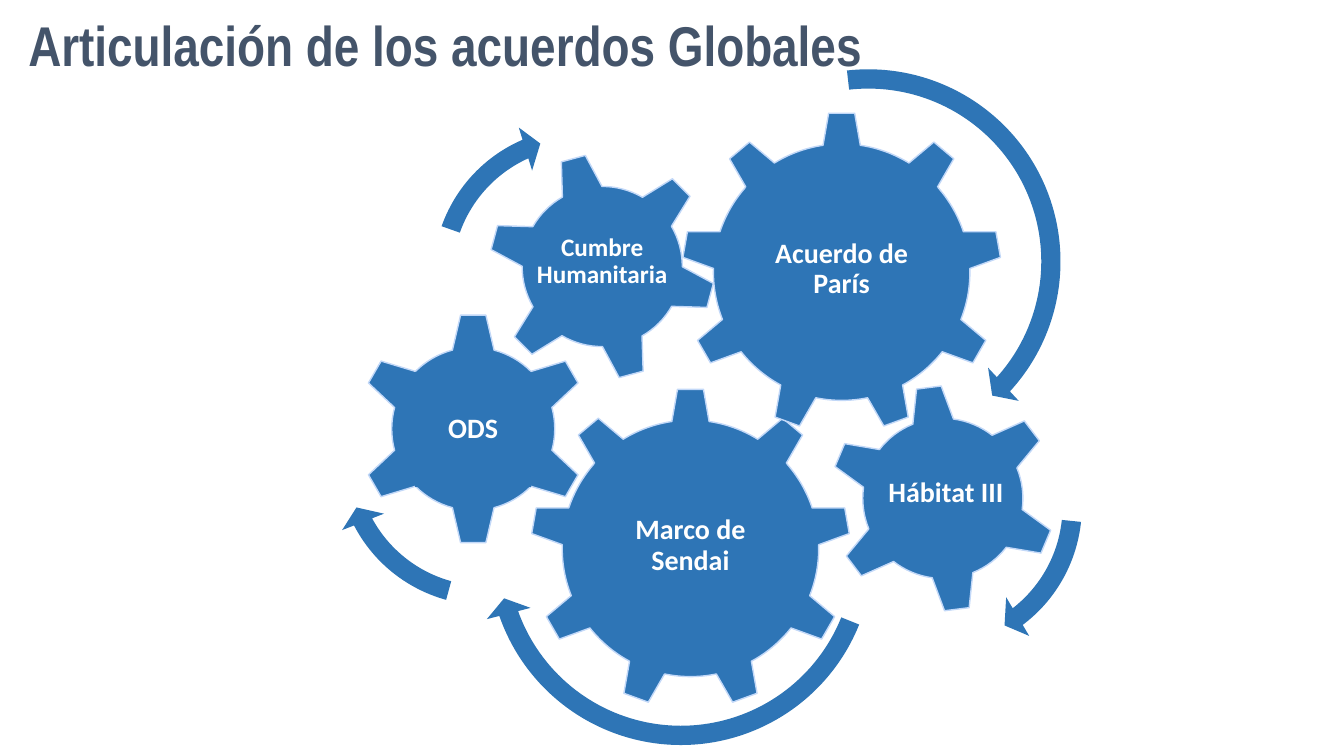
"""Build a slide of interlocking gears for the global agreements."""
from dataclasses import dataclass

from pptx import Presentation
from pptx.dml.color import RGBColor
from pptx.enum.shapes import MSO_SHAPE
from pptx.enum.text import MSO_ANCHOR, MSO_AUTO_SIZE, PP_ALIGN
from pptx.util import Pt

GEAR_6 = MSO_SHAPE.GEAR_6
GEAR_9 = MSO_SHAPE.GEAR_9
CIRCULAR_ARROW = MSO_SHAPE.CIRCULAR_ARROW
RECTANGLE = MSO_SHAPE.RECTANGLE
MIDDLE = MSO_ANCHOR.MIDDLE
NO_AUTOFIT = MSO_AUTO_SIZE.NONE
CENTER = PP_ALIGN.CENTER
LEFT = PP_ALIGN.LEFT

BLUE = "2E75B6"
PALE_BLUE = "C2D8F8"
SLATE = "44546A"
WHITE = "FFFFFF"
TITLE_ONLY = 5
LABEL_INSET = 2
LONG_ARC = (0.047, 2.99, 25.373, 158.165, 0.055)
SHORT_ARC = (0.06, 3.941, 133.138, 105.082, 0.07)


@dataclass(frozen=True)
class Box:
    left: float
    top: float
    width: float
    height: float


@dataclass(frozen=True)
class Gear:
    text: str
    kind: MSO_SHAPE
    box: Box
    label: Box
    rotation: float = 0
    size: float = 20


@dataclass(frozen=True)
class Arrow:
    box: Box
    arc: tuple[float, ...]
    rotation: float = 0


def square(left: float, top: float, side: float) -> Box:
    return Box(left, top, side, side)


GEARS = [
    Gear("Marco de Sendai", GEAR_9, square(378.7, 277.2, 229), Box(424.8, 331.2, 136.8, 117.4)),
    Gear("ODS", GEAR_6, square(254.9, 223.2, 166.3), Box(296.6, 265.7, 82.8, 82.1)),
    Gear("Cumbre Humanitaria", GEAR_6, square(348.5, 108.7, 163.4),
         Box(377.3, 141.1, 105.8, 91.4), 345, 18),
    Gear("Acuerdo de París", GEAR_9, square(486.7, 79.9, 229), Box(532.8, 133.9, 136.8, 117.4)),
    Gear("Hábitat III", GEAR_6, square(591.8, 274.3, 163.4), square(630, 306.7, 91.4), 352.8),
]
ARROWS = [
    Arrow(square(473.8, 40.3, 293), LONG_ARC),
    Arrow(square(300.2, 82.1, 229.7), SHORT_ARC, 24.4),
    Arrow(square(231.8, 211.7, 229.7), SHORT_ARC, 290.2),
    Arrow(square(552.2, 247, 229.7), SHORT_ARC, 190.8),
    Arrow(square(339.8, 248.4, 293), LONG_ARC, 118.3),
]


def color(value: str) -> RGBColor:
    return RGBColor.from_string(value)


def points(box: Box) -> tuple[Pt, Pt, Pt, Pt]:
    return Pt(box.left), Pt(box.top), Pt(box.width), Pt(box.height)


def add_blue_shape(slide, kind: MSO_SHAPE, box: Box, rotation: float = 0):
    shape = slide.shapes.add_shape(kind, *points(box))
    shape.shadow.inherit = False
    shape.rotation = rotation
    shape.fill.solid()
    shape.fill.fore_color.rgb = color(BLUE)
    shape.line.fill.background()
    return shape


def write(shape, text: str, font: str, size: float, ink: str, alignment: PP_ALIGN) -> None:
    frame = shape.text_frame
    frame.word_wrap = True
    frame.auto_size = NO_AUTOFIT
    frame.vertical_anchor = MIDDLE
    paragraph = frame.paragraphs[0]
    paragraph.alignment = alignment
    paragraph.line_spacing = 0.9
    run = paragraph.add_run()
    run.text = text
    run.font.name = font
    run.font.size = Pt(size)
    run.font.bold = True
    run.font.color.rgb = color(ink)


def add_gear(slide, gear: Gear) -> None:
    wheel = add_blue_shape(slide, gear.kind, gear.box, gear.rotation)
    wheel.line.color.rgb = color(PALE_BLUE)
    wheel.line.width = Pt(1)
    if gear.rotation:
        label = slide.shapes.add_textbox(*points(gear.label))
    else:
        label = add_blue_shape(slide, RECTANGLE, gear.label)
    frame = label.text_frame
    frame.margin_left = frame.margin_right = Pt(LABEL_INSET)
    frame.margin_top = frame.margin_bottom = Pt(LABEL_INSET)
    write(label, gear.text, "Calibri", gear.size, WHITE, CENTER)


def add_arrow(slide, arrow: Arrow) -> None:
    shape = add_blue_shape(slide, CIRCULAR_ARROW, arrow.box, arrow.rotation)
    for index, value in enumerate(arrow.arc):
        shape.adjustments[index] = value


def add_title(slide, text: str, box: Box) -> None:
    title = slide.shapes.title
    title.left, title.top, title.width, title.height = points(box)
    write(title, text, "Arial Narrow", 40, SLATE, LEFT)


def main() -> None:
    presentation = Presentation()
    presentation.slide_width, presentation.slide_height = Pt(960), Pt(540)
    slide = presentation.slides.add_slide(presentation.slide_layouts[TITLE_ONLY])
    add_title(slide, "Articulación de los acuerdos Globales", Box(13, 7.2, 715, 55.4))
    for gear in GEARS:
        add_gear(slide, gear)
    for arrow in ARROWS:
        add_arrow(slide, arrow)
    presentation.save("out.pptx")


if __name__ == "__main__":
    main()
